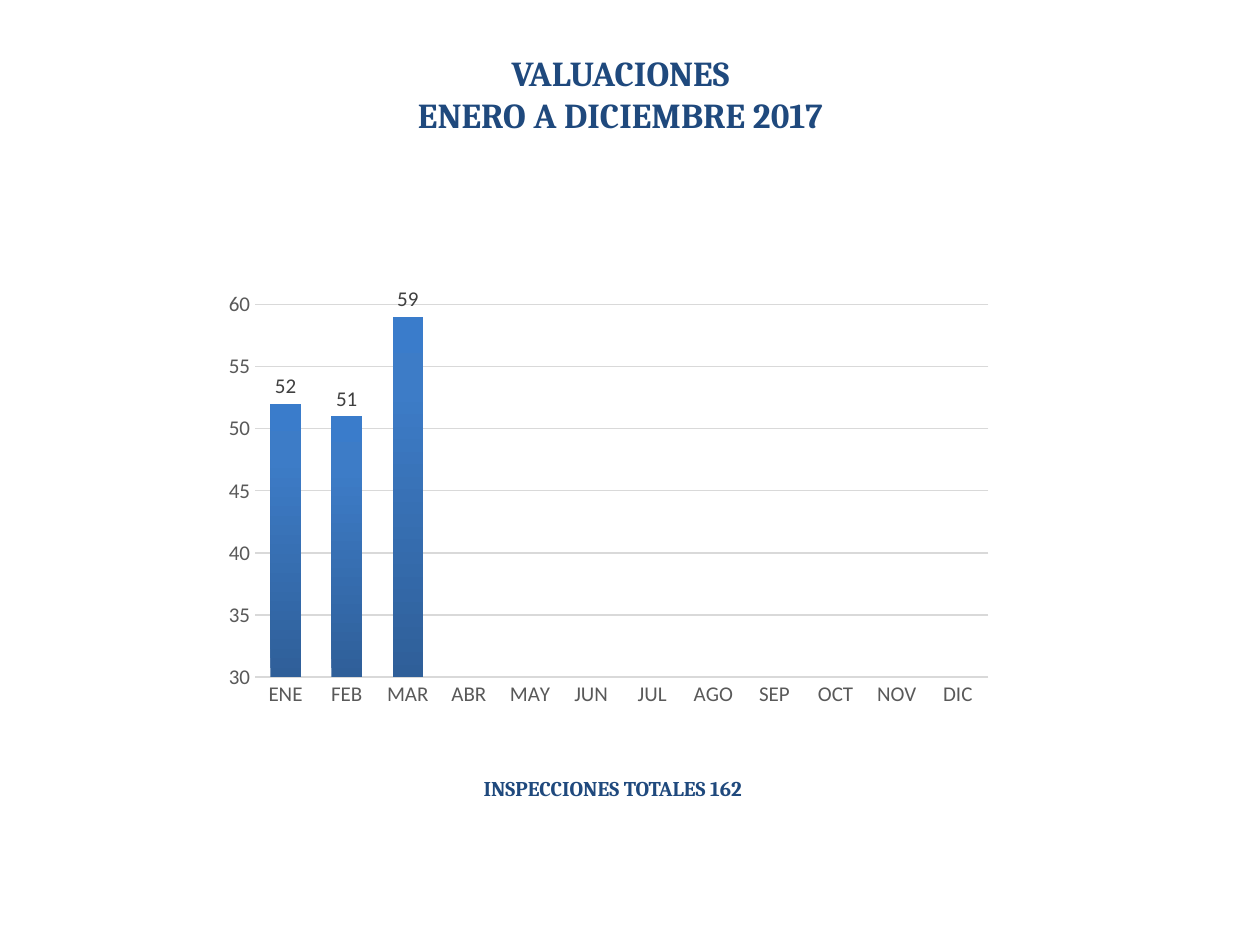
"""Build the 2017 valuations slide with its monthly column chart."""
import copy
from typing import Any, NamedTuple

import pptx
import pptx.chart.data
import pptx.dml.color
import pptx.enum.chart
import pptx.enum.text
import pptx.util
from pptx.util import Inches

NAVY = "1F497D"
AXIS_TEXT = "595959"
GRID = "D9D9D9"
MONTHS = ["ENE", "FEB", "MAR", "ABR", "MAY", "JUN", "JUL", "AGO", "SEP", "OCT", "NOV", "DIC"]
INSPECTIONS = [52, 51, 59]


class Stop(NamedTuple):
    position: float
    color: str


BAR_STOPS = [Stop(0, "2F5F99"), Stop(0.8, "3D7CC7"), Stop(1, "3A7CCB")]


def rgb(color: str) -> pptx.dml.color.RGBColor:
    return pptx.dml.color.RGBColor.from_string(color)


def set_font(font: Any, name: str, size: float, color: str, bold: bool = False) -> None:
    font.name = name
    font.size = pptx.util.Pt(size)
    font.bold = bold
    font.color.rgb = rgb(color)


def set_line(line: Any, color: str, width: float) -> None:
    line.color.rgb = rgb(color)
    line.width = pptx.util.Pt(width)


def write_heading(shape: Any, lines: list[str], size: float, alignment: Any, wrap: bool) -> None:
    frame = shape.text_frame
    frame.text = "\n".join(lines)
    frame.word_wrap = wrap
    for paragraph in frame.paragraphs:
        paragraph.alignment = alignment
        set_font(paragraph.font, "Cambria", size, NAVY, bold=True)


def fill_bars(series: Any) -> None:
    fill = series.format.fill
    fill.gradient()
    fill.gradient_angle = 90
    stop_list = series.format.fill.gradient_stops
    stop_element = series._element.xpath(".//a:gs")[-1]
    stop_element.addnext(copy.deepcopy(stop_element))
    stop_list = fill.gradient_stops
    for gradient_stop, stop in zip(stop_list, BAR_STOPS):
        gradient_stop.position = stop.position
        gradient_stop.color.rgb = rgb(stop.color)


def add_inspections_chart(slide: Any) -> None:
    data = pptx.chart.data.CategoryChartData()
    data.categories = MONTHS
    data.add_series("Series 1", INSPECTIONS + [None] * (len(MONTHS) - len(INSPECTIONS)))
    chart = slide.shapes.add_chart(
        pptx.enum.chart.XL_CHART_TYPE.COLUMN_CLUSTERED,
        Inches(1.69), Inches(2.25), Inches(6.28), Inches(3.43), data,
    ).chart
    chart.has_legend = False
    chart.has_title = False
    set_font(chart.font, "Calibri", 10, "000000")

    for axis in (chart.category_axis, chart.value_axis):
        axis.major_tick_mark = pptx.enum.chart.XL_TICK_MARK.NONE
        axis.minor_tick_mark = pptx.enum.chart.XL_TICK_MARK.NONE
        set_font(axis.tick_labels.font, "Calibri", 12, AXIS_TEXT)
    set_line(chart.category_axis.format.line, GRID, 1)
    value_axis = chart.value_axis
    value_axis.format.line.fill.background()
    value_axis.minimum_scale = 30
    value_axis.maximum_scale = 60
    value_axis.major_unit = 5
    set_line(value_axis.major_gridlines.format.line, GRID, 0.75)

    plot = chart.plots[0]
    plot.vary_by_categories = False
    plot.gap_width = 100
    plot.overlap = -24
    series = plot.series[0]
    fill_bars(series)
    labels = series.data_labels
    labels.show_value = True
    labels.position = pptx.enum.chart.XL_LABEL_POSITION.OUTSIDE_END
    set_font(labels.font, "Calibri", 12, "404040")


def main() -> None:
    presentation = pptx.Presentation()
    presentation.slide_width = Inches(10)
    presentation.slide_height = Inches(7.5)
    slide = presentation.slides.add_slide(presentation.slide_layouts[5])

    total = slide.shapes.add_textbox(Inches(3.74), Inches(6.11), Inches(2.44), Inches(0.3))
    write_heading(total, ["INSPECCIONES TOTALES 162"], 12, pptx.enum.text.PP_ALIGN.LEFT, True)

    title = slide.shapes.title
    title.left, title.top = Inches(3.12), Inches(0.36)
    title.width, title.height = Inches(3.61), Inches(0.77)
    write_heading(title, ["VALUACIONES", "ENERO A DICIEMBRE 2017"], 20,
                  pptx.enum.text.PP_ALIGN.CENTER, False)

    add_inspections_chart(slide)
    presentation.save("out.pptx")


if __name__ == "__main__":
    main()
